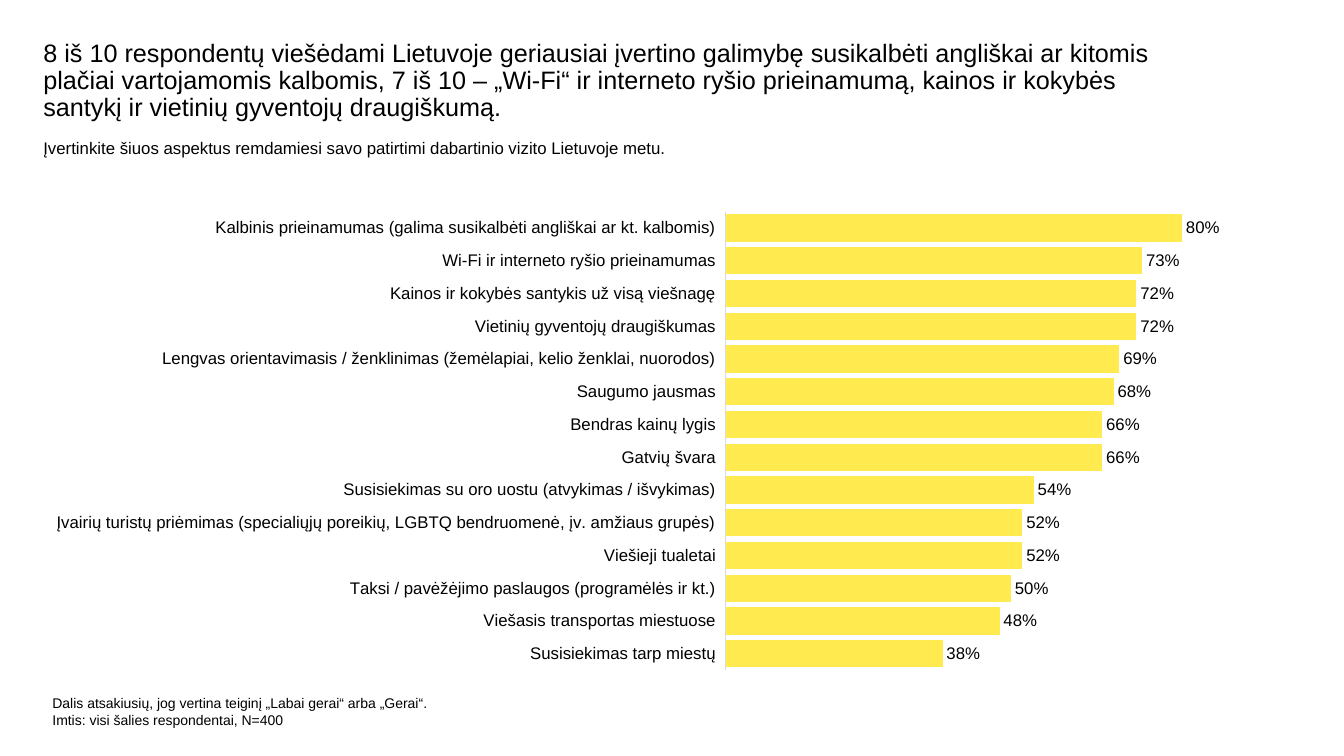
from lxml import etree
from pptx import Presentation
from pptx.chart.data import CategoryChartData
from pptx.dml.color import RGBColor
from pptx.enum.chart import XL_CHART_TYPE, XL_LABEL_POSITION, XL_TICK_LABEL_POSITION, XL_TICK_MARK
from pptx.enum.text import MSO_ANCHOR
from pptx.oxml.ns import qn
from pptx.util import Emu, Pt

PX = 9144  # EMU per px, 100 px to the inch
FONT = "Arial"
BLACK = RGBColor(0x00, 0x00, 0x00)
YELLOW = RGBColor(0xFF, 0xEB, 0x50)
AXIS_GREY = RGBColor(0xD9, 0xD9, 0xD9)
BAR_CHART = XL_CHART_TYPE.BAR_CLUSTERED
OUTSIDE_END = XL_LABEL_POSITION.OUTSIDE_END
NO_TICK = XL_TICK_MARK.NONE
LOW_LABELS = XL_TICK_LABEL_POSITION.LOW
TOP = MSO_ANCHOR.TOP

TITLE = (
    "8 iš 10 respondentų viešėdami Lietuvoje geriausiai įvertino galimybę susikalbėti "
    "angliškai ar kitomis plačiai vartojamomis kalbomis, 7 iš 10 – „Wi-Fi“ ir interneto "
    "ryšio prieinamumą, kainos ir kokybės santykį ir vietinių gyventojų draugiškumą."
)
QUESTION = "Įvertinkite šiuos aspektus remdamiesi savo patirtimi dabartinio vizito Lietuvoje metu."
FOOTNOTE = [
    "Dalis atsakiusių, jog vertina teiginį „Labai gerai“ arba „Gerai“.",
    "Imtis: visi šalies respondentai, N=400",
]

# Ratings from the bottom bar to the top one
RATINGS = [
    ("Susisiekimas tarp miestų", 0.38),
    ("Viešasis transportas miestuose", 0.48),
    ("Taksi / pavėžėjimo paslaugos (programėlės ir kt.)", 0.50),
    ("Viešieji tualetai", 0.52),
    ("Įvairių turistų priėmimas (specialiųjų poreikių, LGBTQ bendruomenė, įv. amžiaus grupės)", 0.52),
    ("Susisiekimas su oro uostu (atvykimas / išvykimas)", 0.54),
    ("Gatvių švara", 0.66),
    ("Bendras kainų lygis", 0.66),
    ("Saugumo jausmas", 0.68),
    ("Lengvas orientavimasis / ženklinimas (žemėlapiai, kelio ženklai, nuorodos)", 0.69),
    ("Vietinių gyventojų draugiškumas", 0.72),
    ("Kainos ir kokybės santykis už visą viešnagę", 0.72),
    ("Wi-Fi ir interneto ryšio prieinamumas", 0.73),
    ("Kalbinis prieinamumas (galima susikalbėti angliškai ar kt. kalbomis)", 0.80),
]


def scale(box):
    return [Emu(length * PX) for length in box]


def set_font(font, size):
    font.name = FONT
    font.size = Pt(size)
    font.color.rgb = BLACK


def add_text(slide, box, lines, size, line_spacing=1.0):
    text_frame = slide.shapes.add_textbox(*scale(box)).text_frame
    text_frame.word_wrap = True
    text_frame.vertical_anchor = TOP
    text_frame.margin_left = text_frame.margin_right = 0
    text_frame.margin_top = text_frame.margin_bottom = 0
    text_frame.text = "\n".join(lines)
    for paragraph in text_frame.paragraphs:
        paragraph.line_spacing = line_spacing
        for run in paragraph.runs:
            set_font(run.font, size)


def set_plot_area(chart, box, plot_box):
    """Fix the inner plot area; plot_box is in px relative to the chart box."""
    plot_area = chart.element.find(".//" + qn("c:plotArea"))
    layout = plot_area.find(qn("c:layout"))
    if layout is None:
        layout = etree.Element(qn("c:layout"))
        plot_area.insert(0, layout)
    manual = etree.SubElement(layout, qn("c:manualLayout"))
    width, height = box[2:]
    left, top, plot_width, plot_height = plot_box
    settings = [
        ("layoutTarget", "inner"), ("xMode", "edge"), ("yMode", "edge"),
        ("x", left / width), ("y", top / height),
        ("w", plot_width / width), ("h", plot_height / height),
    ]
    for tag, value in settings:
        etree.SubElement(manual, qn("c:" + tag)).set("val", str(value))


def add_ratings_chart(slide, box):
    chart_data = CategoryChartData(number_format="0%")
    chart_data.categories = [label for label, share in RATINGS]
    chart_data.add_series("Įvertinimas", [share for label, share in RATINGS])
    chart = slide.shapes.add_chart(BAR_CHART, *scale(box), chart_data).chart
    chart.has_title = False
    chart.has_legend = False
    set_font(chart.font, 12)
    set_plot_area(chart, box, (677, 15, 509, 455))

    # Axes
    category_axis = chart.category_axis
    category_axis.major_tick_mark = category_axis.minor_tick_mark = NO_TICK
    category_axis.tick_label_position = LOW_LABELS
    category_axis.format.line.color.rgb = AXIS_GREY
    category_axis.format.line.width = Pt(0.75)
    set_font(category_axis.tick_labels.font, 12)
    value_axis = chart.value_axis
    value_axis.minimum_scale = 0
    value_axis.maximum_scale = 0.9
    value_axis.has_major_gridlines = False
    value_axis.visible = False

    # Bars and their labels
    plot = chart.plots[0]
    plot.gap_width = 20
    plot.vary_by_categories = False
    series = plot.series[0]
    series.format.fill.solid()
    series.format.fill.fore_color.rgb = YELLOW
    labels = series.data_labels
    labels.show_value = True
    labels.position = OUTSIDE_END
    labels.number_format = "0%"
    labels.number_format_is_linked = False
    set_font(labels.font, 12)


def build_slide(presentation):
    slide = presentation.slides.add_slide(presentation.slide_layouts[6])
    add_text(slide, (43, 40, 1125, 60), [TITLE], 18, line_spacing=0.9)
    add_text(slide, (43, 137, 1189, 61), [QUESTION], 12)
    add_ratings_chart(slide, (43, 195, 1367, 485))
    add_text(slide, (52, 689, 386, 44), FOOTNOTE, 10)


def main():
    presentation = Presentation()
    presentation.slide_width, presentation.slide_height = scale((1333, 750))
    build_slide(presentation)
    presentation.save("out.pptx")


if __name__ == "__main__":
    main()
